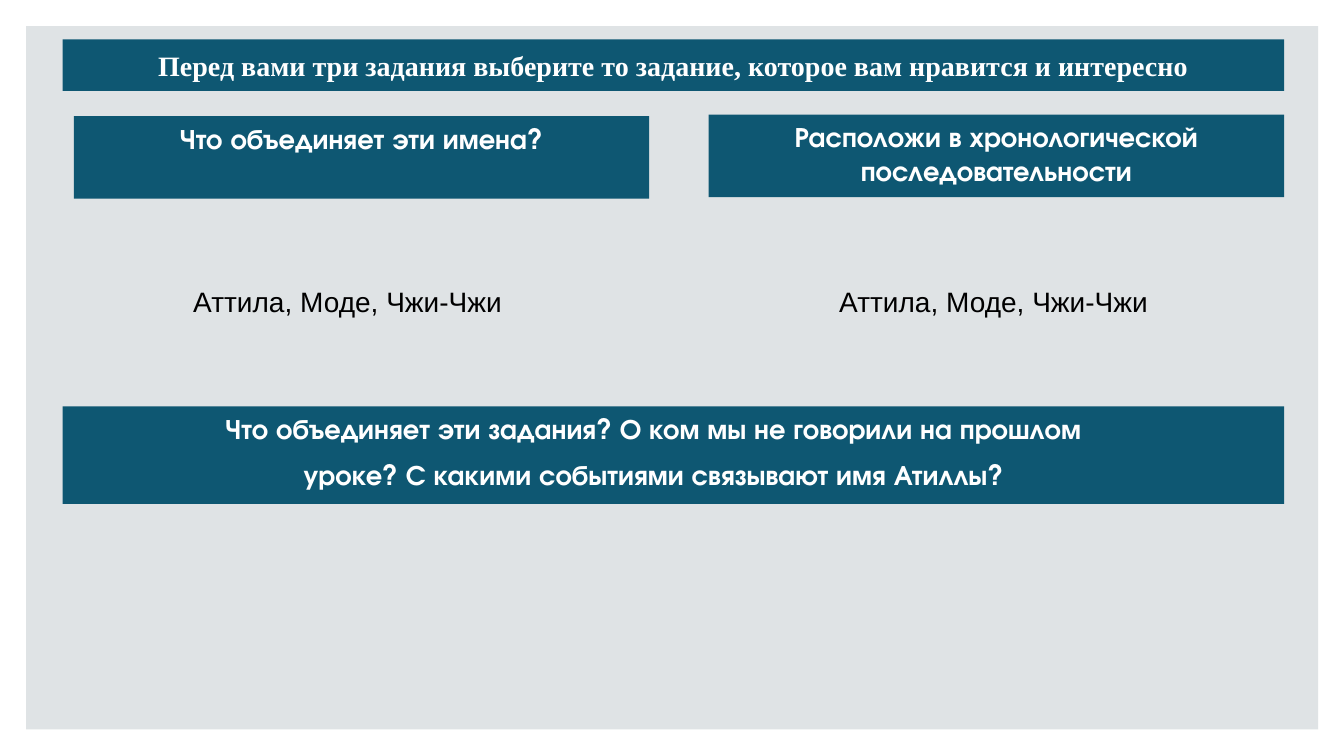
from pptx import Presentation
from pptx.dml.color import RGBColor
from pptx.enum.shapes import MSO_SHAPE
from pptx.enum.text import MSO_ANCHOR, MSO_AUTO_SIZE, PP_ALIGN
from pptx.util import Cm, Pt

COLORS = {"panel": "DFE3E5", "banner": "0E5772", "light": "FFFFFF", "dark": "000000"}
HEAD_FONT = "TeX Gyre Adventor"
NAMES = "Аттила, Моде, Чжи-Чжи"


def fill(sp, color):
    sp.fill.solid()
    sp.fill.fore_color.rgb = RGBColor.from_string(COLORS[color])
    sp.line.fill.background()


def write(sp, text, font=HEAD_FONT, size=20, color="light", bold=True,
          align=PP_ALIGN.CENTER, anchor=MSO_ANCHOR.TOP, before=9):
    tf = sp.text_frame
    tf.word_wrap = True
    tf.auto_size = MSO_AUTO_SIZE.NONE
    tf.vertical_anchor = anchor
    tf.margin_left = tf.margin_right = Cm(0.25)
    tf.margin_top = tf.margin_bottom = Cm(0.13)
    for i, line in enumerate(text.split("\n")):
        p = tf.paragraphs[0] if i == 0 else tf.add_paragraph()
        p.alignment = align
        p.space_before = Pt(before)
        r = p.add_run()
        r.text = line
        r.font.name = font
        r.font.size = Pt(size)
        r.font.bold = bold
        r.font.color.rgb = RGBColor.from_string(COLORS[color])
    return tf


def add_box(s, x, y, w, h, color):
    sp = s.shapes.add_shape(MSO_SHAPE.RECTANGLE, Cm(x), Cm(y), Cm(w), Cm(h))
    sp.shadow.inherit = False
    fill(sp, color)
    return sp


def add_panel(s, x, y, w, h):
    panel = add_box(s, x, y, w, h, "panel")
    s.shapes.title.element.addprevious(panel.element)


def add_title(s, x, y, w, h, text):
    title = s.shapes.title
    title.left, title.top, title.width, title.height = Cm(x), Cm(y), Cm(w), Cm(h)
    fill(title, "banner")
    write(title, text, font="Times New Roman", anchor=MSO_ANCHOR.MIDDLE)


def add_task(s, x, y, w, h, heading, names_x):
    write(add_box(s, x, y, w, h, "banner"), heading)
    names = s.shapes.add_textbox(Cm(names_x), Cm(7.04), Cm(8.4), Cm(1.11))
    write(names, NAMES, font="Arial", color="dark", bold=False,
          align=PP_ALIGN.LEFT, before=0)


def add_questions(s, x, y, w, h, text):
    tf = write(add_box(s, x, y, w, h, "banner"), text)
    tf.paragraphs[0]._p.get_or_add_pPr().set("marR", str(Cm(1)))


def main():
    prs = Presentation()
    prs.slide_width, prs.slide_height = Cm(33.87), Cm(19.05)
    s = prs.slides.add_slide(prs.slide_layouts[5])
    add_panel(s, 0.66, 0.66, 32.56, 17.72)
    add_title(s, 1.58, 0.99, 30.78, 1.3,
              "Перед вами три задания выберите то задание, которое вам нравится и интересно")
    add_task(s, 1.86, 2.93, 14.5, 2.08, "Что объединяет эти имена?", 4.62)
    add_task(s, 17.86, 2.89, 14.5, 2.08,
             "Расположи в хронологической последовательности", 20.9)
    add_questions(s, 1.58, 10.24, 30.78, 2.46,
                  "Что объединяет эти задания? О ком мы не говорили на прошлом\n"
                  "уроке? С какими событиями связывают имя Атиллы?")
    prs.save("out.pptx")


if __name__ == "__main__":
    main()
